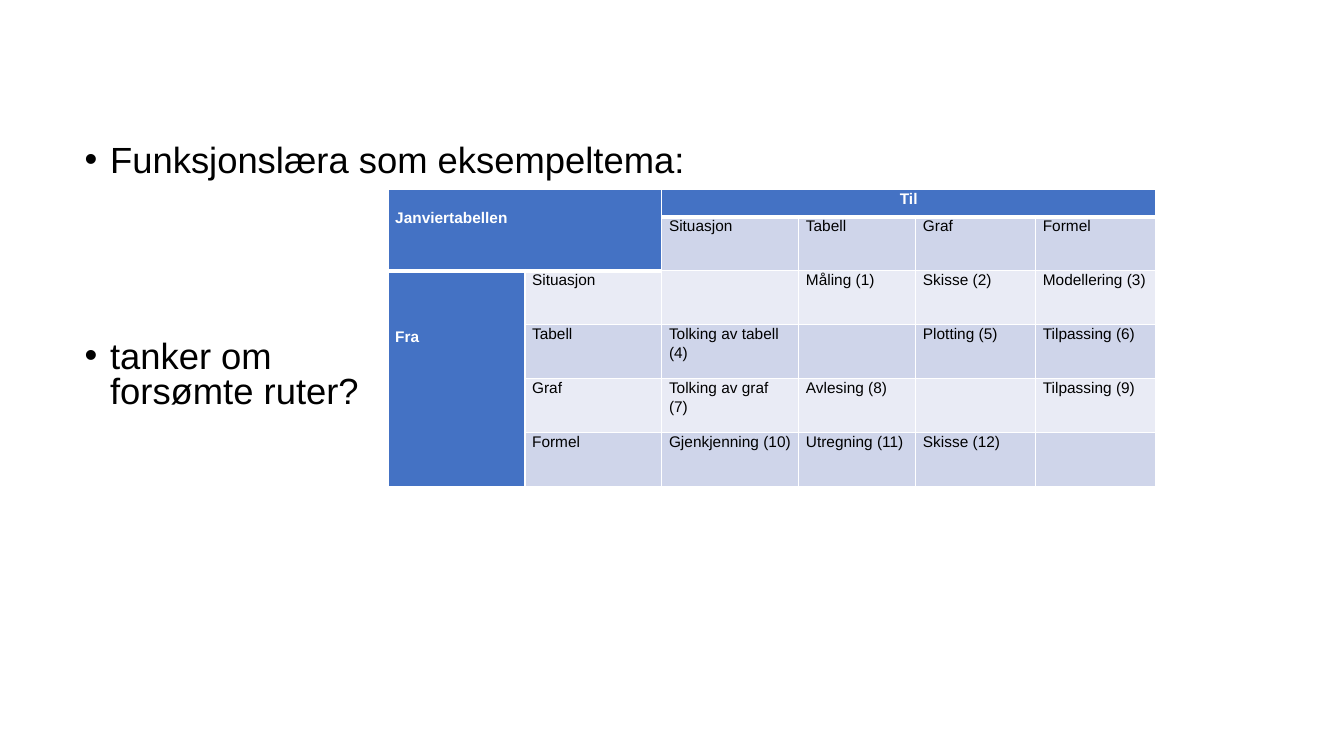
from pptx import Presentation
from pptx.dml.color import RGBColor
from pptx.enum.text import MSO_ANCHOR, MSO_AUTO_SIZE, PP_ALIGN
from pptx.oxml.ns import qn
from pptx.util import Cm, Pt
from lxml.etree import SubElement

BLUE = RGBColor(0x44, 0x72, 0xC4)
BAND_DARK = RGBColor(0xCF, 0xD5, 0xEA)
BAND_LIGHT = RGBColor(0xE9, 0xEB, 0xF5)
WHITE = RGBColor(0xFF, 0xFF, 0xFF)
BLACK = RGBColor(0, 0, 0)


def set_font(run, size, color, bold=False):
    run.font.color.rgb = color
    for name, value in {"name": "Arial", "size": Pt(size), "bold": bold}.items():
        setattr(run.font, name, value)


def add_border(cell, edge, width):
    line = SubElement(cell._tc.get_or_add_tcPr(), qn(f"a:{edge}"), w=str(Pt(width)))
    fill = SubElement(line, qn("a:solidFill"))
    SubElement(fill, qn("a:srgbClr"), val=str(WHITE))


presentation = Presentation()
presentation.slide_width = Cm(33.87)
presentation.slide_height = Cm(19.05)
slide = presentation.slides.add_slide(presentation.slide_layouts[1])
title = slide.shapes.title
title.element.getparent().remove(title.element)

# Bullet list
body = slide.placeholders[1]
for name, value in {"left": 1.88, "top": 3.55, "width": 25.91, "height": 12.09}.items():
    setattr(body, name, Cm(value))
frame = body.text_frame
frame.word_wrap = True
frame.auto_size = MSO_AUTO_SIZE.NONE
frame.vertical_anchor = MSO_ANCHOR.TOP
bullets = [("Funksjonslæra som eksempeltema:", 0), ("tanker om\vforsømte ruter?", 115)]
for index, (text, space) in enumerate(bullets):
    paragraph = frame.add_paragraph() if index else frame.paragraphs[0]
    paragraph.text = text
    properties = paragraph._p.get_or_add_pPr()
    properties.set("marL", str(Cm(0.64)))
    properties.set("indent", str(Cm(-0.64)))
    paragraph.line_spacing = 0.8
    paragraph.space_before = Pt(space)
    SubElement(properties, qn("a:buFont"), typeface="Arial")
    SubElement(properties, qn("a:buChar"), char="•")
    for run in paragraph.runs:
        set_font(run, 26, BLACK)

# Table of translations between representations
rows = [
    ["Janviertabellen", "", "Til", "", "", ""],
    ["", "", "Situasjon", "Tabell", "Graf", "Formel"],
    ["Fra", "Situasjon", "", "Måling (1)", "Skisse (2)", "Modellering (3)"],
    ["", "Tabell", "Tolking av tabell (4)", "", "Plotting (5)", "Tilpassing (6)"],
    ["", "Graf", "Tolking av graf (7)", "Avlesing (8)", "", "Tilpassing (9)"],
    ["", "Formel", "Gjenkjenning (10)", "Utregning (11)", "Skisse (12)", ""],
]
widths = [3.45, 3.45, 3.45, 2.95, 3.02, 3.02]
heights = [0.68] + [1.36] * 5
table = slide.shapes.add_table(
    6, 6, Cm(9.78), Cm(4.78), Cm(sum(widths)), Cm(sum(heights))).table
table.first_row = False
table.horz_banding = False
for column, width in zip(table.columns, widths):
    column.width = Cm(width)
for row, height in zip(table.rows, heights):
    row.height = Cm(height)

# Merged headings, and how far their text sits below the cell top
for first, last in [((0, 0), (1, 1)), ((0, 2), (0, 5)), ((2, 0), (5, 0))]:
    table.cell(*first).merge(table.cell(*last))
text_offsets = {"Janviertabellen": 0.48, "Fra": 1.43}

for row_index, texts in enumerate(rows):
    for column_index, text in enumerate(texts):
        cell = table.cell(row_index, column_index)
        is_corner = row_index < 2 and column_index < 2
        is_heading = is_corner or row_index == 0 or column_index == 0
        # Thick rule below the corner and below "Til"
        thick_bottom = is_corner or row_index == 0
        thick_top = row_index == (2 if column_index < 2 else 1)
        add_border(cell, "lnL", 1)
        add_border(cell, "lnR", 1)
        add_border(cell, "lnT", 3 if thick_top else 1)
        add_border(cell, "lnB", 3 if thick_bottom else 1)
        cell.fill.solid()
        band = BAND_DARK if row_index % 2 else BAND_LIGHT
        cell.fill.fore_color.rgb = BLUE if is_heading else band
        cell.vertical_anchor = MSO_ANCHOR.TOP
        cell.margin_left = cell.margin_right = Cm(0.18)
        cell.margin_top = Cm(text_offsets.get(text, 0))
        cell.margin_bottom = 0
        if text:
            paragraph = cell.text_frame.paragraphs[0]
            paragraph.line_spacing = 1.07
            paragraph.alignment = PP_ALIGN.CENTER if text == "Til" else PP_ALIGN.LEFT
            run = paragraph.add_run()
            run.text = text
            set_font(run, 11, WHITE if is_heading else BLACK, is_heading)

presentation.save("out.pptx")
